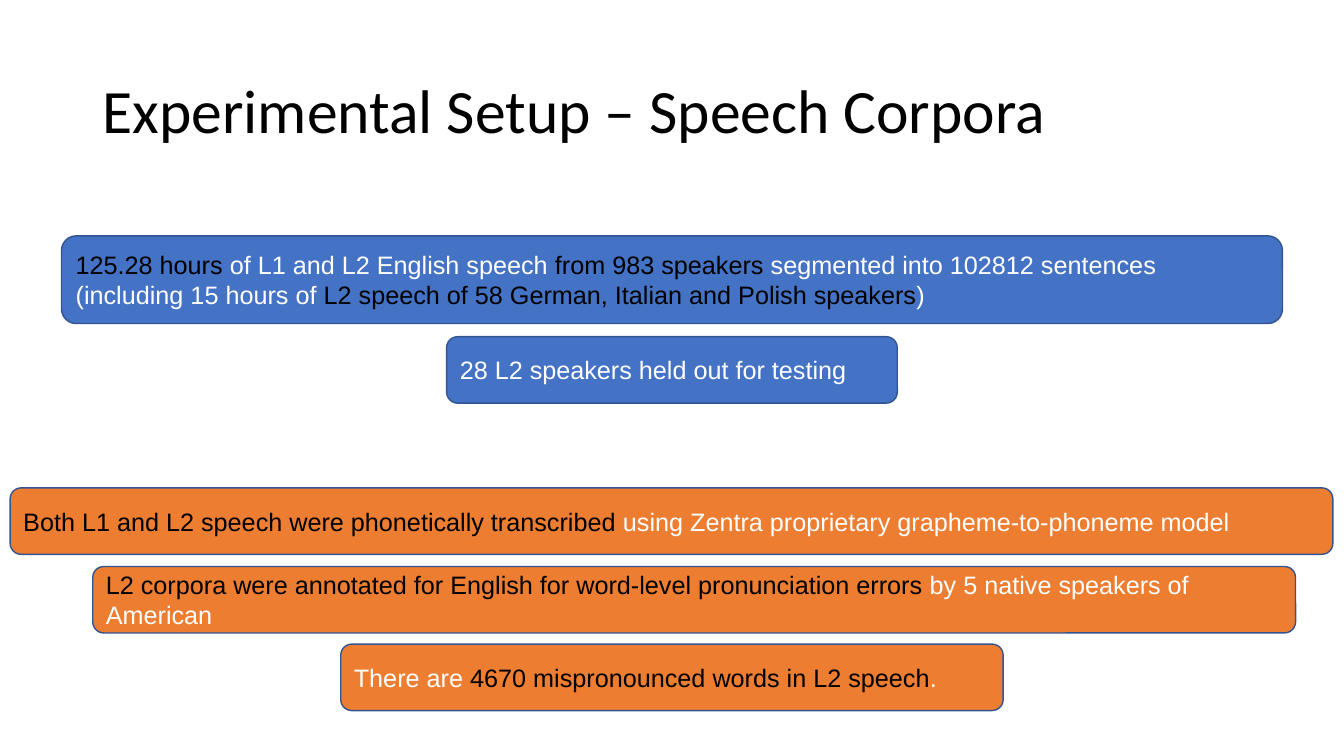
from pptx import Presentation
from pptx.dml.color import RGBColor
from pptx.enum.shapes import MSO_SHAPE as SHAPE
from pptx.enum.text import MSO_ANCHOR as ANCHOR, PP_ALIGN as ALIGN
from pptx.util import Pt

PX = 9144
COLORS = {
    "black": "000000",
    "white": "FFFFFF",
    "blue": "4472C4",
    "orange": "ED7D31",
    "outline": "325491",
}
BOXES = [
    ("blue", (61, 234, 1211, 87), [
        ("125.28 hours ", "black"),
        ("of L1 and L2 English speech ", "white"),
        ("from 983 speakers ", "black"),
        ("segmented into 102812 sentences (including 15 hours of ", "white"),
        ("L2 speech of 58 German, Italian and Polish speakers", "black"),
        (")", "white"),
    ]),
    ("blue", (443, 334, 447, 66), [
        ("28 L2 speakers held out for testing", "white"),
    ]),
    ("orange", (10, 484, 1312, 66), [
        ("Both L1 and L2 speech were phonetically transcribed ", "black"),
        ("using Zentra proprietary grapheme-to-phoneme model", "white"),
    ]),
    ("orange", (92, 562, 1193, 66), [
        ("L2 corpora were annotated for English for word-level pronunciation errors ", "black"),
        ("by 5 native speakers of American", "white"),
    ]),
    ("orange", (338, 639, 657, 66), [
        ("There are ", "white"),
        ("4670 mispronounced words in L2 speech", "black"),
        (".", "white"),
    ]),
]


def rgb(name):
    """Return the named colour."""
    return RGBColor.from_string(COLORS[name])


def emu(box):
    """Turn px lengths into EMU."""
    return [n * PX for n in box]


def write(s, runs, font, size):
    """Write coloured runs as one left-aligned, vertically centred paragraph."""
    tf = s.text_frame
    tf.word_wrap = True
    tf.vertical_anchor = ANCHOR.MIDDLE
    p = tf.paragraphs[0]
    p.alignment = ALIGN.LEFT
    p.font.name = font
    p.font.size = Pt(size)
    for text, color in runs:
        r = p.add_run()
        r.text = text
        r.font.color.rgb = rgb(color)
    return p


def add_title(slide, box, text):
    """Add the slide title."""
    s = slide.shapes.add_textbox(*emu(box))
    p = write(s, [(text, "black")], "Calibri", 44)
    p.line_spacing = 0.9


def add_box(slide, fill, box, runs):
    """Add a rounded box with coloured text."""
    s = slide.shapes.add_shape(SHAPE.ROUNDED_RECTANGLE, *emu(box))
    s.shadow.inherit = False
    s.fill.solid()
    s.fill.fore_color.rgb = rgb(fill)
    s.line.color.rgb = rgb("outline")
    s.line.width = Pt(1)
    write(s, runs, "Arial", 18)


def main():
    """Build the slide and save it."""
    prs = Presentation()
    prs.slide_width, prs.slide_height = emu((1333, 750))
    slide = prs.slides.add_slide(prs.slide_layouts[6])
    add_title(slide, (92, 40, 1150, 145), "Experimental Setup – Speech Corpora")
    for fill, box, runs in BOXES:
        add_box(slide, fill, box, runs)
    prs.save("out.pptx")


if __name__ == "__main__":
    main()
